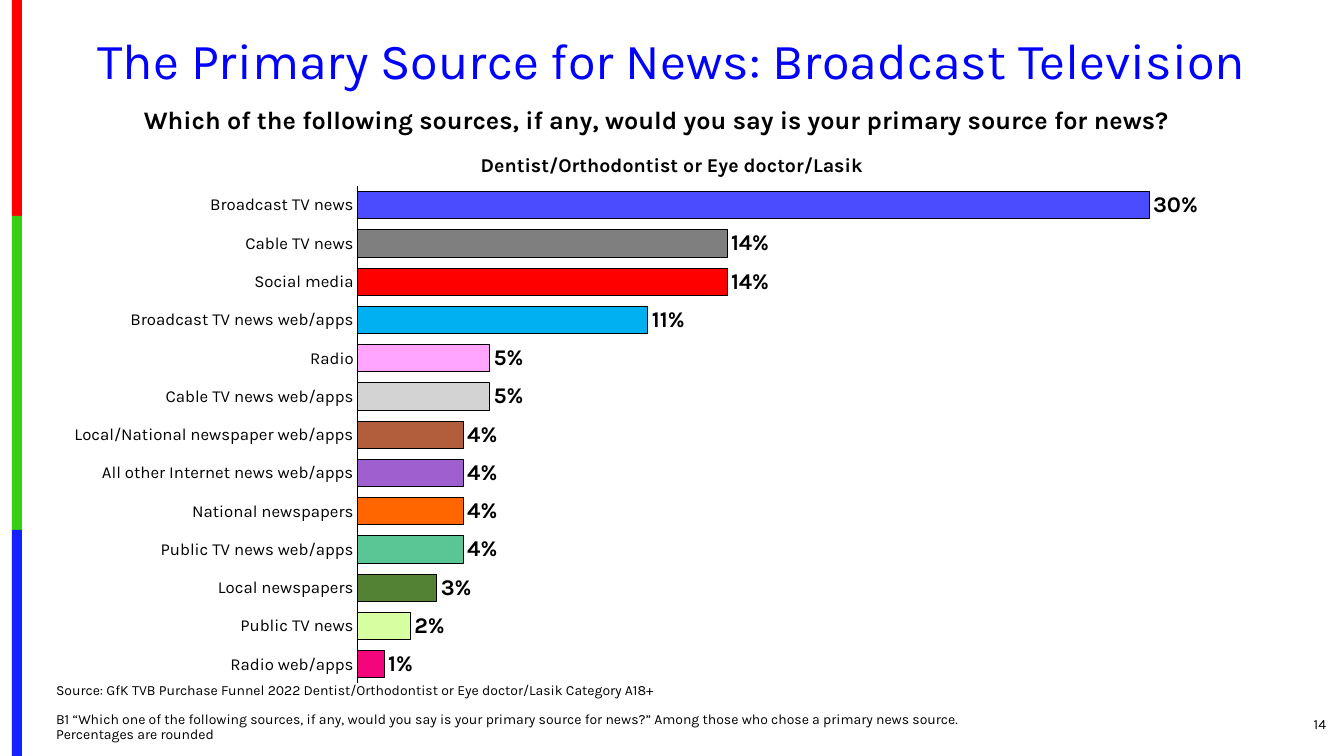
"""Builds a slide with a bar chart of primary news sources."""
from lxml import etree
from pptx import Presentation
from pptx import util as u
from pptx.chart.data import CategoryChartData
from pptx.dml.color import RGBColor
from pptx.enum import chart as charts, shapes, text
from pptx.oxml import ns

PX = u.Inches(1) / 100.8
FONT = "Karla"
BLACK = RGBColor(0, 0, 0)
TITLE_BLUE = RGBColor(0, 0, 255)
STRIPES = [
    (0, 216, RGBColor(0xFE, 0x00, 0x00)),
    (216, 530, RGBColor(0x36, 0xCF, 0x12)),
    (530, 756, RGBColor(0x13, 0x22, 0xFE)),
]
SOURCES = [
    ("Broadcast TV news", 0.30, RGBColor(0x4C, 0x4C, 0xFF)),
    ("Cable TV news", 0.14, RGBColor(0x7F, 0x7F, 0x7F)),
    ("Social media", 0.14, RGBColor(0xFF, 0x00, 0x00)),
    ("Broadcast TV news web/apps", 0.11, RGBColor(0x00, 0xB0, 0xF0)),
    ("Radio", 0.05, RGBColor(0xFF, 0xA4, 0xFF)),
    ("Cable TV news web/apps", 0.05, RGBColor(0xD3, 0xD3, 0xD3)),
    ("Local/National newspaper web/apps", 0.04, RGBColor(0xB2, 0x5E, 0x3C)),
    ("All other Internet news web/apps", 0.04, RGBColor(0xA0, 0x5F, 0xCF)),
    ("National newspapers", 0.04, RGBColor(0xFF, 0x66, 0x00)),
    ("Public TV news web/apps", 0.04, RGBColor(0x5A, 0xC6, 0x95)),
    ("Local newspapers", 0.03, RGBColor(0x54, 0x82, 0x34)),
    ("Public TV news", 0.02, RGBColor(0xD7, 0xFF, 0xA1)),
    ("Radio web/apps", 0.01, RGBColor(0xF3, 0x05, 0x7C)),
]


def px(*lengths):
    return [round(length * PX) for length in lengths]


def write(box, place, lines, size, align, anchor, color=BLACK, bold=False):
    box.left, box.top, box.width, box.height = px(*place)
    frame = box.text_frame
    frame.text = "\n".join(lines)
    frame.word_wrap = True
    frame.auto_size = text.MSO_AUTO_SIZE.NONE
    frame.vertical_anchor = anchor
    for para in frame.paragraphs:
        para.alignment = align
        for span in para.runs:
            span.font.name = FONT
            span.font.size = u.Pt(size)
            span.font.bold = bold
            span.font.color.rgb = color


deck = Presentation()
deck.slide_width, deck.slide_height = px(1344, 756)
page = deck.slides.add_slide(deck.slide_layouts[1])
LEFT, CENTER, RIGHT = text.PP_ALIGN.LEFT, text.PP_ALIGN.CENTER, text.PP_ALIGN.RIGHT
TOP, MIDDLE, BOTTOM = text.MSO_ANCHOR.TOP, text.MSO_ANCHOR.MIDDLE, text.MSO_ANCHOR.BOTTOM

for top, bottom, color in STRIPES:
    stripe = page.shapes.add_shape(
        shapes.MSO_SHAPE.RECTANGLE, *px(12, top, 10, bottom - top))
    stripe.shadow.inherit = False
    stripe.fill.solid()
    stripe.fill.fore_color.rgb = color
    stripe.line.fill.background()

title = page.shapes.title
write(title, (46, 31, 1252, 66),
      ["The Primary Source for News: Broadcast Television"],
      36, CENTER, TOP, TITLE_BLUE)
title.text_frame.paragraphs[0].line_spacing = 0.9

notes = page.placeholders[1]
write(notes, (46, 677, 953, 71), [
    "Source: GfK TVB Purchase Funnel 2022 Dentist/Orthodontist or Eye doctor/Lasik Category A18+",
    "B1 “Which one of the following sources, if any, would you say is your primary source for news?” "
    "Among those who chose a primary news source. Percentages are rounded",
], 10, LEFT, BOTTOM)
for number, para in enumerate(notes.text_frame.paragraphs):
    props = para._p.get_or_add_pPr()
    props.set("marL", "0")
    props.set("indent", "0")
    etree.SubElement(props, ns.qn("a:buNone"))
    para.line_spacing = 0.9
    para.space_before = u.Pt(10 if number else 0)

data = CategoryChartData(number_format="0%")
data.categories = [name for name, share, color in SOURCES]
data.add_series("Series 1", [share for name, share, color in SOURCES])
chart = page.shapes.add_chart(
    charts.XL_CHART_TYPE.BAR_CLUSTERED, *px(25, 138, 1310, 566), data).chart
chart.has_legend = False
chart.has_title = False
chart.font.name = FONT
chart.font.size = u.Pt(10)
chart.font.color.rgb = BLACK

category_axis = chart.category_axis
category_axis.reverse_order = True
category_axis.major_tick_mark = charts.XL_TICK_MARK.NONE
category_axis.tick_labels.font.name = FONT
category_axis.tick_labels.font.size = u.Pt(12)
category_axis.tick_labels.font.color.rgb = BLACK
category_axis.format.line.color.rgb = BLACK
category_axis.format.line.width = u.Pt(0.75)

value_axis = chart.value_axis
value_axis.minimum_scale = 0
value_axis.maximum_scale = 0.35
value_axis.has_major_gridlines = False
value_axis.visible = False

plot = chart.plots[0]
plot.gap_width = 40
plot.vary_by_categories = False
plot.has_data_labels = True
labels = plot.data_labels
labels.show_value = True
labels.number_format = "0%"
labels.number_format_is_linked = False
labels.position = charts.XL_LABEL_POSITION.OUTSIDE_END
labels.font.name = FONT
labels.font.size = u.Pt(16)
labels.font.bold = True
labels.font.color.rgb = BLACK

for number, (name, share, color) in enumerate(SOURCES):
    bar = plot.series[0].points[number].format
    bar.fill.solid()
    bar.fill.fore_color.rgb = color
    bar.line.color.rgb = BLACK
    bar.line.width = u.Pt(0.75)

plot_area = chart._chartSpace.chart.plotArea
for old in plot_area.findall(ns.qn("c:layout")):
    plot_area.remove(old)
layout = etree.Element(ns.qn("c:layout"))
manual = etree.SubElement(layout, ns.qn("c:manualLayout"))
for tag, value in [("layoutTarget", "inner"), ("xMode", "edge"), ("yMode", "edge"),
                   ("x", "0.254"), ("y", "0.085"), ("w", "0.705"), ("h", "0.879")]:
    etree.SubElement(manual, ns.qn("c:" + tag)).set("val", value)
plot_area.insert(0, layout)

for place, words, size, align, anchor, bold in [
    ((134, 99, 1123, 40),
     "Which of the following sources, if any, would you say is your primary source for news?",
     18, LEFT, TOP, True),
    ((456, 148, 432, 34), "Dentist/Orthodontist or Eye doctor/Lasik", 14, CENTER, TOP, True),
    ((1227, 704, 109, 40), "14", 10, RIGHT, MIDDLE, False),
]:
    box = page.shapes.add_textbox(*px(*place))
    write(box, place, [words], size, align, anchor, bold=bold)

deck.save("out.pptx")
